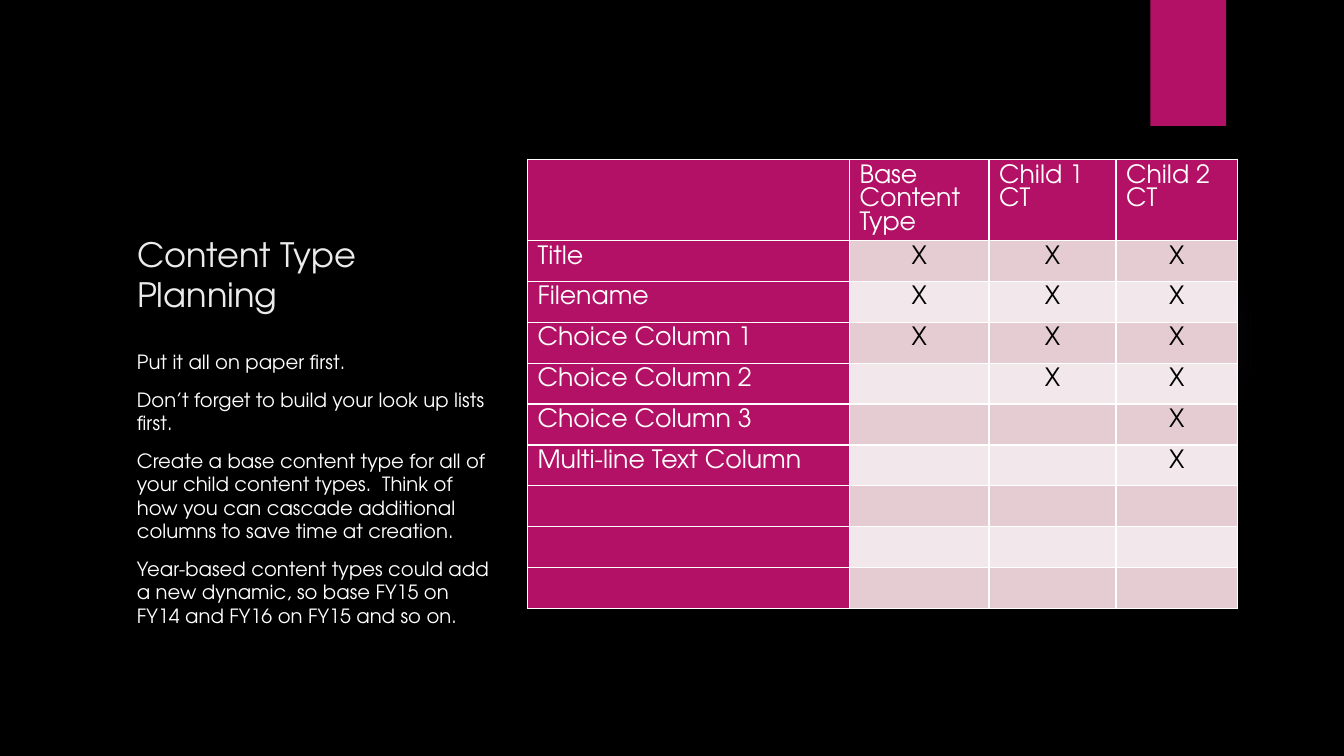
"""Build the content type planning slide."""
from pptx import Presentation
from pptx.dml.color import RGBColor
from pptx.enum.shapes import MSO_SHAPE
from pptx.enum.text import MSO_ANCHOR, MSO_AUTO_SIZE, PP_ALIGN
from pptx.oxml import parse_xml
from pptx.oxml.ns import nsdecls
from pptx.util import Pt

LEFT, CENTER = PP_ALIGN.LEFT, PP_ALIGN.CENTER
TOP, BOTTOM = MSO_ANCHOR.TOP, MSO_ANCHOR.BOTTOM
RECT, OVAL = MSO_SHAPE.RECTANGLE, MSO_SHAPE.OVAL
NO_FIT = MSO_AUTO_SIZE.NONE
TITLE_ONLY = 5

TITLE = "Content Type Planning"
NOTES = [
    "Put it all on paper first.",
    "Don’t forget to build your look up lists first.",
    "Create a base content type for all of your child content types.  "
    "Think of how you can cascade additional columns to save time at creation.",
    "Year-based content types could add a new dynamic, so base FY15 on FY14 "
    "and FY16 on FY15 and so on.",
]
HEADER = ["", "Base Content Type", "Child 1 CT", "Child 2 CT"]
FIELDS = [
    ("Title", 3),
    ("Filename", 3),
    ("Choice Column 1", 3),
    ("Choice Column 2", 2),
    ("Choice Column 3", 1),
    ("Multi-line Text Column", 1),
    ("", 0),
    ("", 0),
    ("", 0),
]

THEME = {
    "font": "TeX Gyre Adventor",
    "back": "000000",
    "accent": "B31166",
    "glow": "9B6BF2",
    "title": "EBEBEB",
    "light": "FFFFFF",
    "dark": "000000",
    "bands": ("E5CCD3", "F2E7EA"),
    "title_size": 24,
    "note_size": 14,
    "cell_size": 18,
}

SIZE = (960, 540)
GLOW = (677.5, 131.8, 221.8, 221.8)
GLOW_STOPS = ((0, 7), (36, 6), (69, 0))
TAB = (821.8, 0, 54, 90)
TITLE_BOX = (90.7, 114.3, 267.8, 113.8)
NOTE_BOX = (90.7, 246.5, 267.8, 228.2)
GRID_AT = (376.8, 113.8)
COLS = (230, 99.7, 90.7, 86.8)
HEAD_H, ROW_H = 57.9, 29.25
NOTE_GAP, RULE = 10, 1


def color(key):
    return RGBColor.from_string(THEME.get(key, key))


def paint(fill, key):
    fill.solid()
    fill.fore_color.rgb = color(key)


def apply(item, values):
    for name, value in values.items():
        setattr(item, name, value)


def style(para, size, key, **values):
    apply(para, values)
    apply(para.font, {"name": THEME["font"], "size": Pt(THEME[size])})
    para.font.color.rgb = color(key)


def place(shape, box):
    names = ("left", "top", "width", "height")
    apply(shape, dict(zip(names, map(Pt, box))))


def border(cell):
    props = cell._tc.get_or_add_tcPr()
    for side in "LRTB":
        props.append(parse_xml(
            f'<a:ln{side} {nsdecls("a")} w="{Pt(RULE)}"><a:solidFill>'
            f'<a:srgbClr val="{THEME["light"]}"/></a:solidFill></a:ln{side}>'))


def add_shape(slide, kind, box):
    shape = slide.shapes.add_shape(kind, *map(Pt, box))
    shape.shadow.inherit = False
    shape.line.fill.background()
    return shape


def add_glow(slide):
    glow = add_shape(slide, OVAL, GLOW)
    stops = "".join(
        f'<a:gs pos="{pos * 1000}"><a:srgbClr val="{THEME["glow"]}">'
        f'<a:alpha val="{alpha * 1000}"/></a:srgbClr></a:gs>'
        for pos, alpha in GLOW_STOPS)
    glow._element.spPr.prstGeom.addnext(parse_xml(
        f'<a:gradFill {nsdecls("a")}><a:gsLst>{stops}</a:gsLst>'
        '<a:path path="circle"><a:fillToRect l="50000" t="50000" '
        'r="50000" b="50000"/></a:path></a:gradFill>'))


def add_title(slide):
    title = slide.shapes.title
    place(title, TITLE_BOX)
    title.text = TITLE
    apply(title.text_frame, {"vertical_anchor": BOTTOM, "word_wrap": True,
                             "auto_size": NO_FIT})
    style(title.text_frame.paragraphs[0], "title_size", "title", alignment=LEFT)


def add_notes(slide):
    frame = slide.shapes.add_textbox(*map(Pt, NOTE_BOX)).text_frame
    apply(frame, {"word_wrap": True, "vertical_anchor": TOP})
    frame.text = "\n".join(NOTES)
    for i, para in enumerate(frame.paragraphs):
        style(para, "note_size", "light", space_before=Pt(NOTE_GAP if i else 0))


def add_grid(slide):
    marks = len(COLS) - 1
    rows = [HEADER] + [[name] + [""] * (marks - n) + ["X"] * n
                       for name, n in FIELDS]
    high = HEAD_H + ROW_H * len(FIELDS)
    box = (*GRID_AT, sum(COLS), high)
    table = slide.shapes.add_table(len(rows), len(COLS), *map(Pt, box)).table
    table.horz_banding = False
    for col, width in zip(table.columns, COLS):
        col.width = Pt(width)
    for r, row in enumerate(rows):
        table.rows[r].height = Pt(ROW_H if r else HEAD_H)
        for c, text in enumerate(row):
            cell = table.cell(r, c)
            inner = r > 0 and c > 0
            border(cell)
            paint(cell.fill, THEME["bands"][(r - 1) % 2] if inner else "accent")
            cell.text = text
            para = cell.text_frame.paragraphs[0]
            style(para, "cell_size", "dark" if inner else "light",
                  alignment=CENTER if inner else LEFT)
            para.font.bold = False


def main():
    deck = Presentation()
    deck.slide_width, deck.slide_height = map(Pt, SIZE)
    slide = deck.slides.add_slide(deck.slide_layouts[TITLE_ONLY])
    paint(slide.background.fill, "back")
    add_glow(slide)
    paint(add_shape(slide, RECT, TAB).fill, "accent")
    add_title(slide)
    add_grid(slide)
    add_notes(slide)
    deck.save("out.pptx")


if __name__ == "__main__":
    main()
